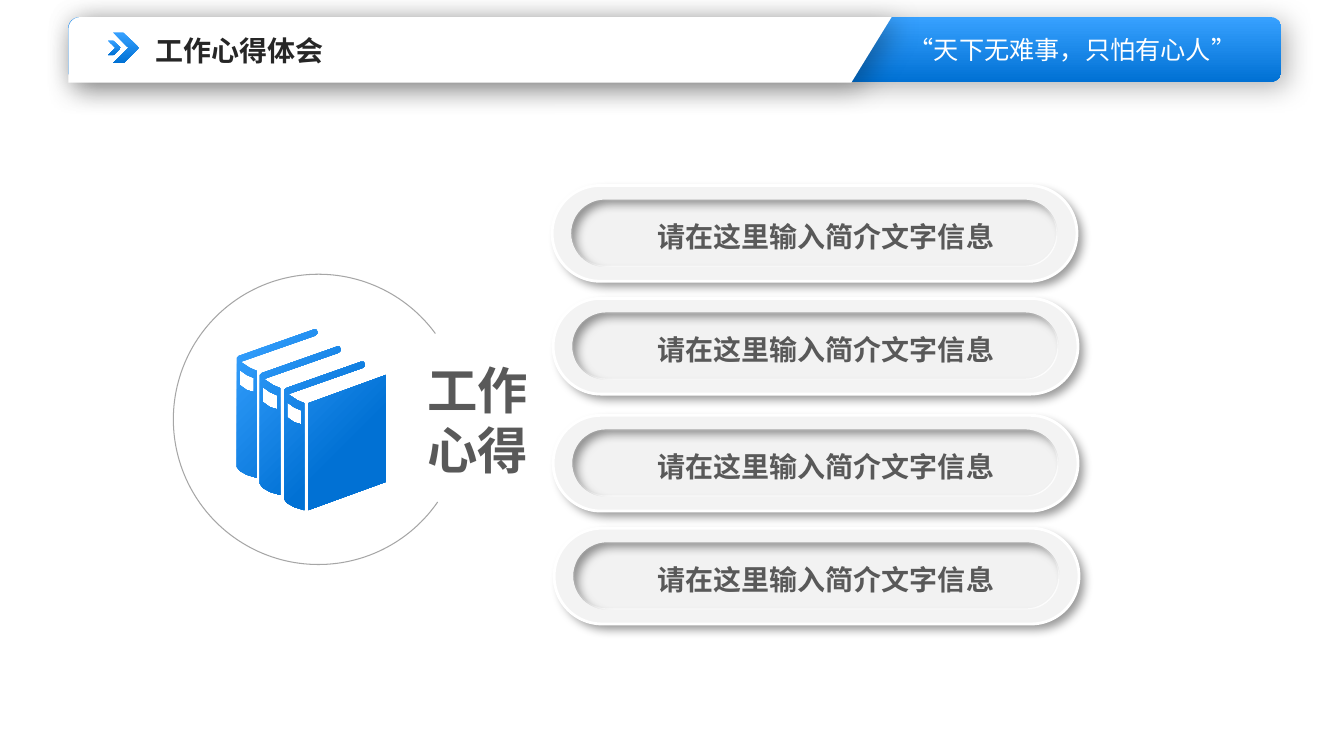
from math import cos, pi, sin
from typing import NamedTuple

from lxml.etree import SubElement
from pptx import Presentation
from pptx.dml.color import RGBColor
from pptx.enum.shapes import MSO_SHAPE as Preset
from pptx.enum.text import MSO_AUTO_SIZE as AutoSize, PP_ALIGN as Align
from pptx.oxml.ns import qn
from pptx.util import Inches, Pt

FONT = "Noto Sans CJK SC"
WHITE = RGBColor(0xFF, 0xFF, 0xFF)
BLUE_LIGHT = RGBColor(0x37, 0xA1, 0xFF)
BLUE_DARK = RGBColor(0x01, 0x71, 0xD4)
TITLE_INK = RGBColor(0x26, 0x26, 0x26)
TEXT_GREY = RGBColor(0x59, 0x59, 0x59)
ARC_GREY = RGBColor(0xA6, 0xA6, 0xA6)
PILL_GREY = RGBColor(0xF2, 0xF2, 0xF2)
RING_GREY = RGBColor(0xF3, 0xF3, 0xF3)

Point = tuple[float, float]
Outline = list[Point]


class Box(NamedTuple):
    left: float
    top: float
    width: float
    height: float


class Pill(NamedTuple):
    left: float
    top: float
    text: str


class Shadow(NamedTuple):
    opacity: int
    blur: float
    distance: float = 5
    angle: int = 45


HEADER_SHADOW = Shadow(opacity=30, blur=20)
RING_SHADOW = Shadow(opacity=40, blur=7)
PILL_TEXT = "请在这里输入简介文字信息"
PILLS = [
    Pill(5.48, 1.84, PILL_TEXT),
    Pill(5.49, 2.96, PILL_TEXT),
    Pill(5.49, 4.12, PILL_TEXT),
    Pill(5.5, 5.24, PILL_TEXT),
]
PILL_WIDTH, PILL_HEIGHT = 5.21, 0.95
RIM_X, RIM_Y = 0.19, 0.14

# Book icon: one spine and label, repeated at each offset, then the front cover
BOOK_OFFSETS = [(2.35, 3.26), (2.58, 3.43), (2.82, 3.58)]
SPINE = [(0.8, 0.03), (0.79, 0.01), (0.76, 0.01), (0.02, 0.27), (0, 0.29),
         (0, 1.37), (0.03, 1.41), (0.1, 1.45), (0.2, 1.48), (0.2, 0.42),
         (0.13, 0.39), (0.04, 0.33), (0.78, 0.07), (0.8, 0.05)]
LABEL = [(0.17, 0.49), (0.17, 0.63), (0.1, 0.61), (0.03, 0.56),
         (0.03, 0.41), (0.1, 0.46)]
FRONT_COVER = [(3.06, 4), (3.06, 5.06), (3.83, 4.78), (3.83, 3.72)]


def arc_points(x: float, y: float, radius: float, start: int, end: int) -> Outline:
    steps = 24
    angles = [(start + (end - start) * i / steps) * pi / 180 for i in range(steps + 1)]
    return [(x + radius * cos(a), y + radius * sin(a)) for a in angles]


def stadium(box: Box) -> Outline:
    radius = box.height / 2
    middle = box.top + radius
    return (arc_points(box.left + radius, middle, radius, 90, 270)
            + arc_points(box.left + box.width - radius, middle, radius, -90, 90))


def shift(outline: Outline, offset: Point) -> Outline:
    return [(x + offset[0], y + offset[1]) for x, y in outline]


def style(shape, fill=None, line=None, line_width: float = 1,
          gradient_angle=None, gradient_end: float = 1, shadow=None) -> None:
    if gradient_angle is not None:
        shape.fill.gradient()
        shape.fill.gradient_angle = 360 - gradient_angle
        first, last = shape.fill.gradient_stops
        first.color.rgb, first.position = BLUE_LIGHT, 0
        last.color.rgb, last.position = BLUE_DARK, gradient_end
    elif fill is None:
        shape.fill.background()
    else:
        shape.fill.solid()
        shape.fill.fore_color.rgb = fill
    if line is None:
        shape.line.fill.background()
    else:
        shape.line.color.rgb = line
        shape.line.width = Pt(line_width)
    shape.shadow.inherit = False
    if shadow:
        effects = shape._element.spPr.find(qn("a:effectLst"))
        outer = SubElement(effects, qn("a:outerShdw"), blurRad=str(Pt(shadow.blur)),
                           dist=str(Pt(shadow.distance)), dir=str(shadow.angle * 60000),
                           algn="tl", rotWithShape="0")
        color = SubElement(outer, qn("a:srgbClr"), val="000000")
        SubElement(color, qn("a:alpha"), val=str(shadow.opacity * 1000))


def add_preset(slide, preset, box: Box, adjustments=(), **look):
    shape = slide.shapes.add_shape(preset, *map(Inches, box))
    for index, value in enumerate(adjustments):
        shape.adjustments[index] = value
    style(shape, **look)
    return shape


def add_outlines(slide, outlines: list[Outline], **look) -> None:
    points = [[(Inches(x), Inches(y)) for x, y in outline] for outline in outlines]
    builder = slide.shapes.build_freeform(*points[0][0])
    for index, outline in enumerate(points):
        if index:
            builder.move_to(*outline[0])
        builder.add_line_segments(outline[1:], close=True)
    style(builder.convert_to_shape(), **look)


def add_text(slide, box: Box, text: str, *, size: float, color: RGBColor,
             bold: bool = False, align=Align.LEFT, wrap: bool = True,
             inset: Point = (0.1, 0.05)) -> None:
    frame = slide.shapes.add_textbox(*map(Inches, box)).text_frame
    frame.word_wrap = wrap
    frame.auto_size = AutoSize.SHAPE_TO_FIT_TEXT
    frame.margin_left = frame.margin_right = Inches(inset[0])
    frame.margin_top = frame.margin_bottom = Inches(inset[1])
    frame.text = text
    for paragraph in frame.paragraphs:
        paragraph.alignment = align
        for run in paragraph.runs:
            run.font.name = FONT
            run.font.size = Pt(size)
            run.font.bold = bold
            run.font.color.rgb = color
            SubElement(run.font._element, qn("a:ea"), typeface=FONT)


def add_header(slide) -> None:
    add_preset(slide, Preset.ROUNDED_RECTANGLE, Box(0.68, 0.17, 12.04, 0.64),
               gradient_angle=90, shadow=HEADER_SHADOW)
    panel = arc_points(0.8, 0.29, 0.12, 180, 270) + [(8.85, 0.17), (8.45, 0.82), (0.68, 0.82)]
    add_outlines(slide, [panel], fill=WHITE, shadow=HEADER_SHADOW)
    add_text(slide, Box(8.65, 0.29, 3.99, 0.4), "“天下无难事，只怕有心人”",
             size=18, color=WHITE, align=Align.CENTER)
    for box, notch in ((Box(1.12, 0.32, 0.26, 0.31), 0.606),
                       (Box(1.07, 0.4, 0.13, 0.15), 0.586)):
        add_preset(slide, Preset.CHEVRON, box, [notch], gradient_angle=90)
    add_text(slide, Box(1.47, 0.29, 2.44, 0.41), "工作心得体会",
             size=20, color=TITLE_INK, bold=True, inset=(0.07, 0.04))


def add_topic(slide) -> None:
    books = [shift(part, offset) for offset in BOOK_OFFSETS for part in (SPINE, LABEL)]
    add_outlines(slide, books + [FRONT_COVER], gradient_angle=45, gradient_end=0.7)
    circle = add_preset(slide, Preset.ARC, Box(1.72, 2.72, 2.88, 2.88), [138.842, 96.258],
                        line=ARC_GREY, line_width=0.75)
    circle.rotation = 163.3
    add_text(slide, Box(4.17, 3.52, 1.16, 1.29), "工作\n心得", size=36,
             color=TEXT_GREY, bold=True, wrap=False, inset=(0.07, 0.04))


def add_pill(slide, pill: Pill) -> None:
    outer = Box(pill.left, pill.top, PILL_WIDTH, PILL_HEIGHT)
    inner = Box(pill.left + RIM_X, pill.top + RIM_Y,
                PILL_WIDTH - 2 * RIM_X, PILL_HEIGHT - 2 * RIM_Y)
    add_preset(slide, Preset.ROUNDED_RECTANGLE, inner, [0.5],
               fill=PILL_GREY, line=WHITE, line_width=2)
    add_outlines(slide, [stadium(outer), stadium(inner)[::-1]],
                 fill=RING_GREY, shadow=RING_SHADOW)
    add_preset(slide, Preset.ROUNDED_RECTANGLE, outer, [0.5], line=WHITE, line_width=2)
    add_text(slide, Box(6.43, pill.top + 0.29, 3.57, 0.44), pill.text,
             size=20, color=TEXT_GREY, bold=True, wrap=False)


def main() -> None:
    presentation = Presentation()
    presentation.slide_width, presentation.slide_height = Inches(13.34), Inches(7.5)
    slide = presentation.slides.add_slide(presentation.slide_layouts[6])
    add_header(slide)
    add_topic(slide)
    for pill in PILLS:
        add_pill(slide, pill)
    presentation.save("out.pptx")


if __name__ == "__main__":
    main()
